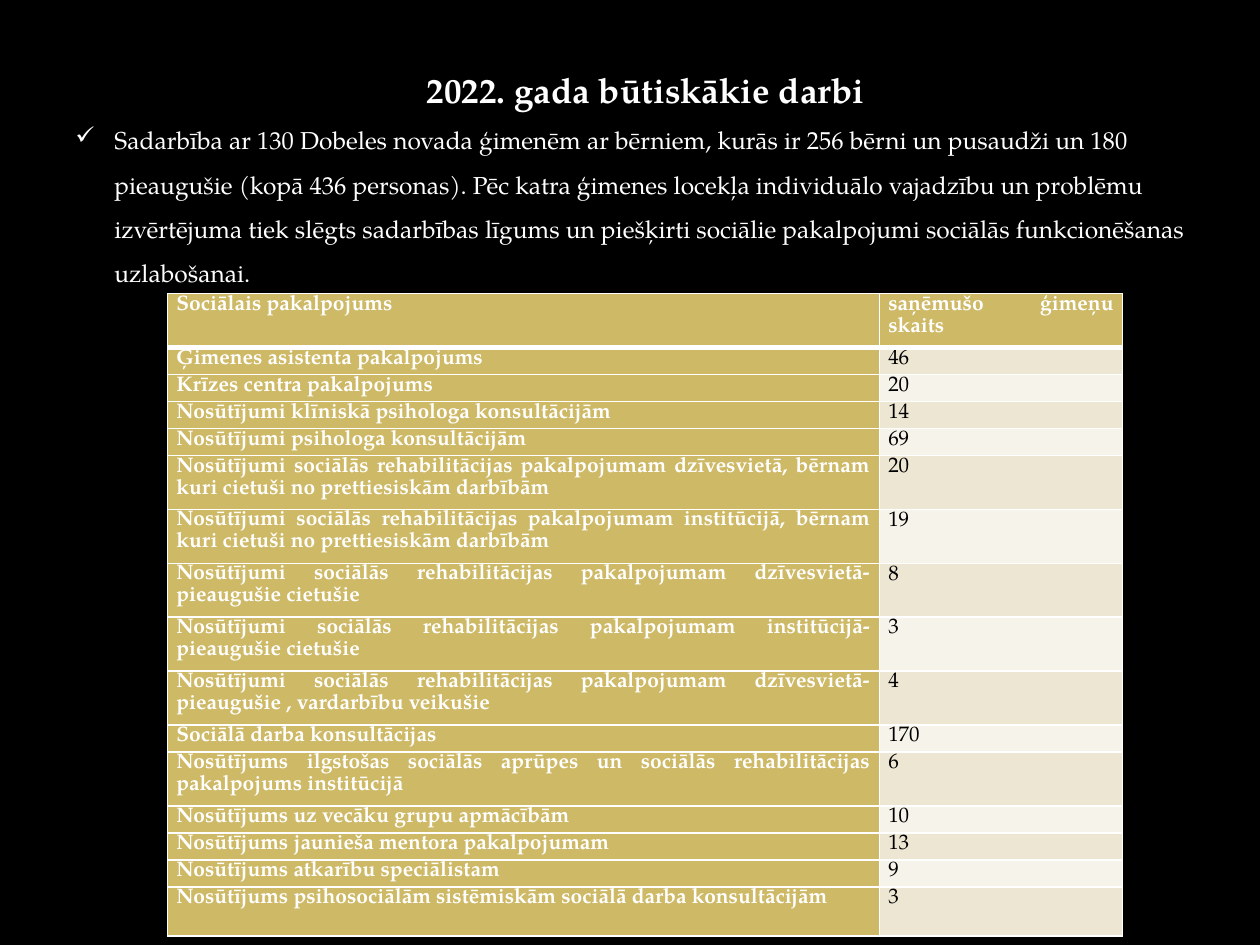
from lxml.etree import SubElement
from pptx import Presentation
from pptx.dml.color import RGBColor
from pptx.enum.text import MSO_ANCHOR, PP_ALIGN
from pptx.oxml import parse_xml
from pptx.oxml.ns import nsdecls, qn
from pptx.util import Inches, Pt

BLACK = RGBColor(0x00, 0x00, 0x00)
WHITE = RGBColor(0xFF, 0xFF, 0xFF)
GOLD = RGBColor(0xCE, 0xB9, 0x66)
BANDS = (RGBColor(0xED, 0xE6, 0xD3), RGBColor(0xF6, 0xF3, 0xEA))

TALL_ROW = 0.41
SINGLE_ROW = TALL_ROW / 2
LAST_ROW = 0.39

TITLE = "2022. gada būtiskākie darbi"
SUMMARY = (
    "Sadarbība ar 130 Dobeles novada ģimenēm ar bērniem, kurās ir 256 bērni un "
    "pusaudži un 180 pieaugušie (kopā 436 personas). Pēc katra ģimenes locekļa "
    "individuālo vajadzību un problēmu izvērtējuma tiek slēgts sadarbības līgums "
    "un piešķirti sociālie pakalpojumi sociālās funkcionēšanas uzlabošanai."
)
REHABILITATION = "Nosūtījumi sociālās rehabilitācijas pakalpojumam"
HEADER = ("Sociālais pakalpojums", "saņēmušo ģimeņu skaits", TALL_ROW)
SERVICES = [
    ("Ģimenes asistenta pakalpojums", "46", SINGLE_ROW),
    ("Krīzes centra pakalpojums", "20", SINGLE_ROW),
    ("Nosūtījumi klīniskā psihologa konsultācijām", "14", SINGLE_ROW),
    ("Nosūtījumi psihologa konsultācijām", "69", SINGLE_ROW),
    (f"{REHABILITATION} dzīvesvietā, bērnam kuri cietuši no prettiesiskām darbībām",
     "20", TALL_ROW),
    (f"{REHABILITATION} institūcijā, bērnam kuri cietuši no prettiesiskām darbībām",
     "19", TALL_ROW),
    (f"{REHABILITATION} dzīvesvietā- pieaugušie cietušie", "8", TALL_ROW),
    (f"{REHABILITATION} institūcijā- pieaugušie cietušie", "3", TALL_ROW),
    (f"{REHABILITATION} dzīvesvietā- pieaugušie , vardarbību veikušie", "4", TALL_ROW),
    ("Sociālā darba konsultācijas", "170", SINGLE_ROW),
    ("Nosūtījums ilgstošas sociālās aprūpes un sociālās rehabilitācijas "
     "pakalpojums institūcijā", "6", TALL_ROW),
    ("Nosūtījums uz vecāku grupu apmācībām", "10", SINGLE_ROW),
    ("Nosūtījums jaunieša mentora pakalpojumam", "13", SINGLE_ROW),
    ("Nosūtījums atkarību speciālistam", "9", SINGLE_ROW),
    ("Nosūtījums psihosociālām sistēmiskām sociālā darba konsultācijām", "3", LAST_ROW),
]


def apply(target, values):
    for name, value in values.items():
        setattr(target, name, value)


class SlideBuilder:
    font_name = "TeX Gyre Pagella"
    body_format = {"line_spacing": 1.5}
    cell_format = {"alignment": PP_ALIGN.JUSTIFY, "line_spacing": 1.07,
                   "space_after": Pt(8)}
    cell_margins = {"margin_left": Inches(0.07), "margin_right": Inches(0.07),
                    "margin_top": 0, "margin_bottom": 0,
                    "vertical_anchor": MSO_ANCHOR.TOP}

    def __init__(self, slide):
        self.slide = slide
        fill = slide.background.fill
        fill.solid()
        fill.fore_color.rgb = BLACK

    def add_text(self, paragraph, text, size, color, bold, layout):
        apply(paragraph, layout)
        run = paragraph.add_run()
        run.text = text
        apply(run.font, {"name": self.font_name, "size": Pt(size), "bold": bold})
        run.font.color.rgb = color

    def bullet(self, paragraph, character, indent):
        properties = paragraph._p.get_or_add_pPr()
        properties.set("marL", str(Inches(indent)))
        properties.set("indent", str(-Inches(indent)))
        SubElement(properties, qn("a:buChar")).set("char", character)

    def intro(self, left, top, width, height):
        frame = self.slide.shapes.add_textbox(
            Inches(left), Inches(top), Inches(width), Inches(height)).text_frame
        frame.word_wrap = True
        self.add_text(frame.paragraphs[0], TITLE, 20, WHITE, True,
                      {**self.body_format, "alignment": PP_ALIGN.CENTER})
        summary = frame.add_paragraph()
        self.add_text(summary, SUMMARY, 14, WHITE, False, self.body_format)
        self.bullet(summary, "✓", 0.31)

    def borders(self, cell, top, bottom):
        """Draw white cell borders; top and bottom are widths in points."""
        properties = cell._tc.get_or_add_tcPr()
        widths = {"lnL": 1, "lnR": 1, "lnT": top, "lnB": bottom}
        for position, (side, width) in enumerate(widths.items()):
            properties.insert(position, parse_xml(
                f'<a:{side} {nsdecls("a")} w="{Pt(width)}"><a:solidFill>'
                f'<a:srgbClr val="{WHITE}"/></a:solidFill></a:{side}>'))

    def cell(self, cell, text, fill, color, bold):
        apply(cell, self.cell_margins)
        cell.fill.solid()
        cell.fill.fore_color.rgb = fill
        self.add_text(cell.text_frame.paragraphs[0], text, 12, color, bold,
                      self.cell_format)

    def services(self, left, top, column_widths):
        rows = [HEADER, *SERVICES]
        table = self.slide.shapes.add_table(
            len(rows), len(column_widths), Inches(left), Inches(top),
            Inches(sum(column_widths)), Inches(sum(row[2] for row in rows))).table
        for column, width in zip(table.columns, column_widths):
            column.width = Inches(width)
        for index, (service, families, height) in enumerate(rows):
            table.rows[index].height = Inches(height)
            name_cell, count_cell = table.rows[index].cells
            self.cell(name_cell, service, GOLD, WHITE, True)
            if index == 0:
                self.cell(count_cell, families, GOLD, WHITE, True)
            else:
                self.cell(count_cell, families, BANDS[(index - 1) % 2], BLACK, False)
            for cell in (name_cell, count_cell):
                self.borders(cell, top=3 if index == 1 else 1,
                             bottom=3 if index == 0 else 1)


def main():
    presentation = Presentation()
    presentation.slide_width = Inches(10)
    presentation.slide_height = Inches(7.5)
    builder = SlideBuilder(presentation.slides.add_slide(presentation.slide_layouts[6]))
    builder.intro(0.5, 0.33, 9.25, 6.5)
    builder.services(1.33, 2.33, (5.65, 1.93))
    presentation.save("out.pptx")


if __name__ == "__main__":
    main()
